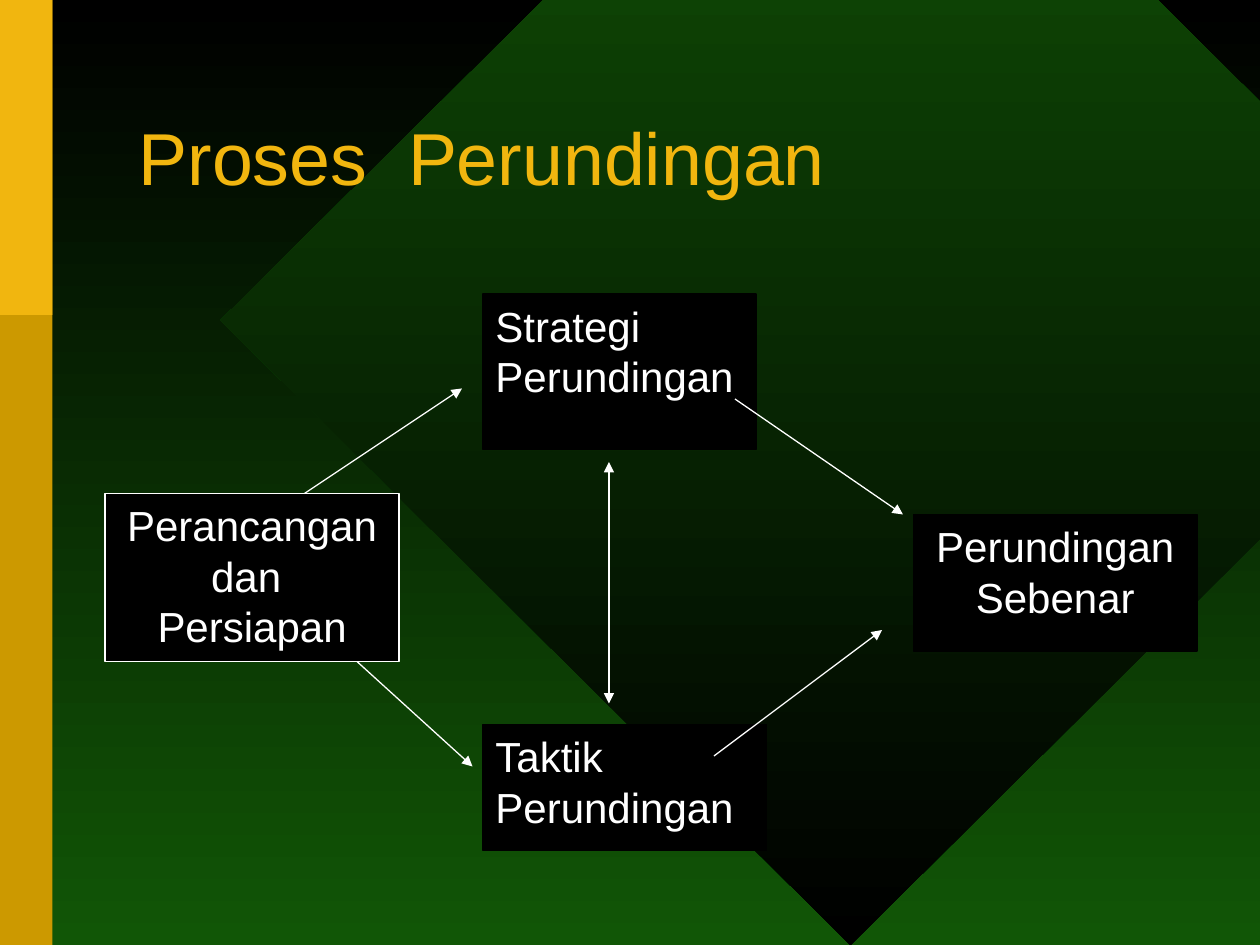
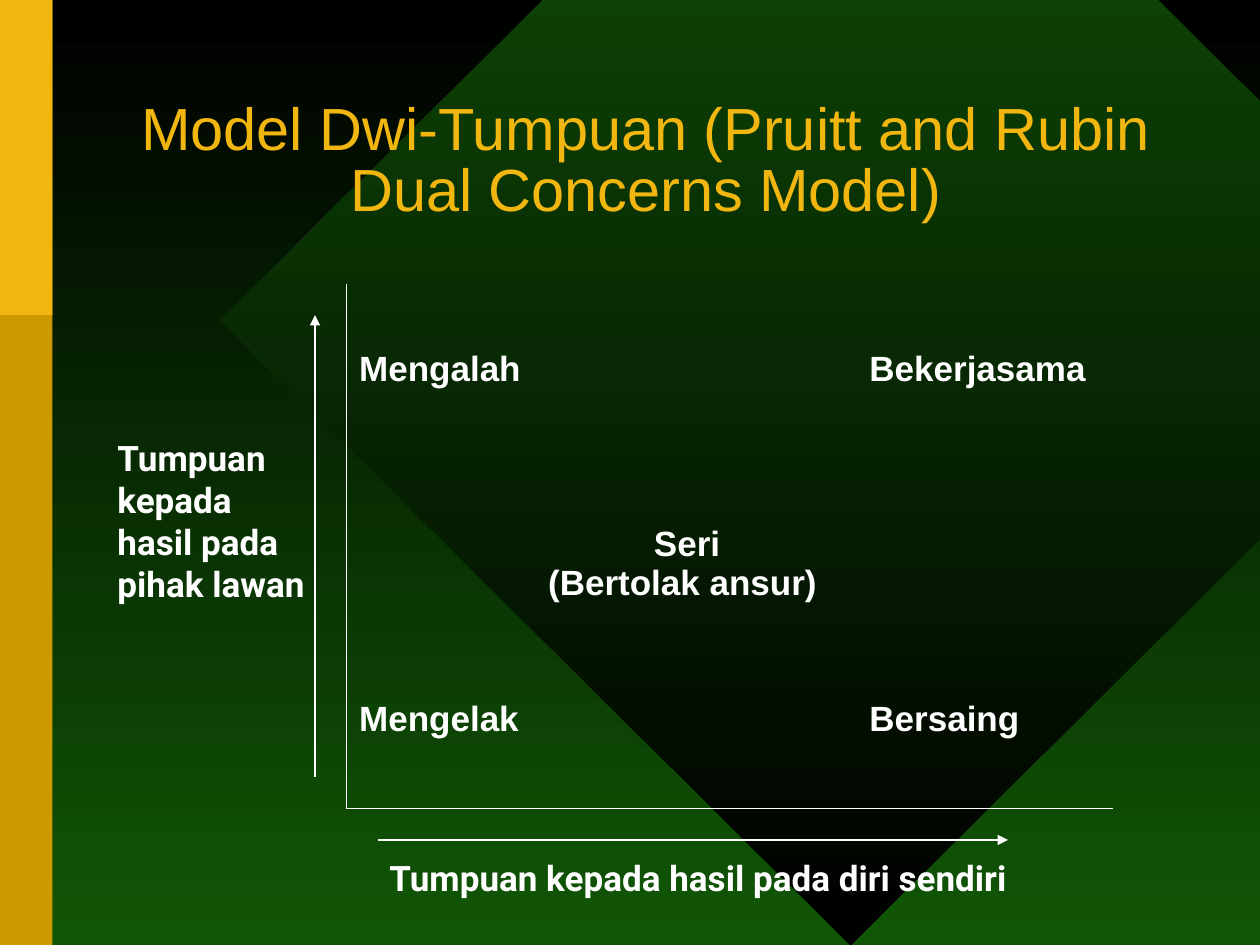
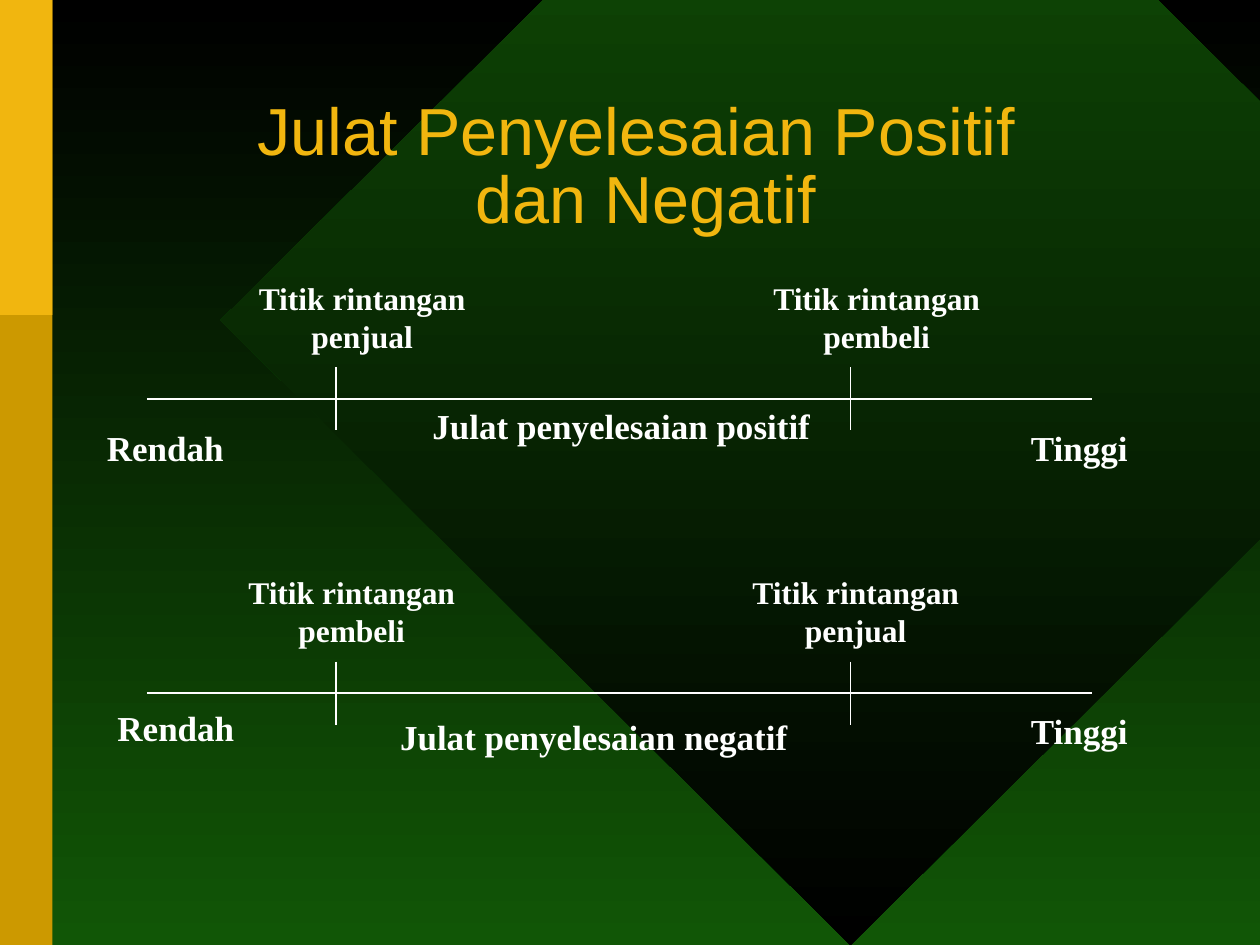
from lxml import etree
from pptx import Presentation
from pptx import util as u
from pptx.dml.color import RGBColor
from pptx.enum import shapes, text
from pptx.oxml.ns import qn

Pt = u.Pt
SHAPE = shapes.MSO_SHAPE
LEFT, CENTER = text.PP_ALIGN.LEFT, text.PP_ALIGN.CENTER
COLORS = {"black": "000000", "green": "115606", "gold": "F1B60F",
          "dark_gold": "CC9900", "white": "FFFFFF"}
NO_STYLE_NO_GRID = "{2D5ABB26-0587-4C30-8999-92F81FD0307C}"
TITLE_BOX = (72, 48, 594, 90)


def rgb(name):
    return RGBColor.from_string(COLORS[name])


def fill_down(fill, top, bottom):
    """Gradient that runs from top to bottom."""
    fill.gradient()
    fill.gradient_angle = 270
    for stop, name in zip(fill.gradient_stops, (top, bottom)):
        stop.color.rgb = rgb(name)


def format_text(tf, size, font="Arial", color="white", bold=False, align=LEFT):
    for p in tf.paragraphs:
        p.alignment = align
        for r in p.runs:
            r.font.size, r.font.name, r.font.bold = Pt(size), font, bold
            r.font.color.rgb = rgb(color)


def add_box(s, box, preset=SHAPE.RECTANGLE, fill=None, line=None):
    sp = s.shapes.add_shape(preset, *map(Pt, box))
    sp.shadow.inherit = False
    if fill:
        sp.fill.solid()
        sp.fill.fore_color.rgb = rgb(fill)
    if line:
        sp.line.color.rgb = rgb(line)
        sp.line.width = Pt(0.75)
    else:
        sp.line.fill.background()
    return sp


def add_label(s, box, words, size, font, align=LEFT):
    tf = s.shapes.add_textbox(*map(Pt, box)).text_frame
    tf.word_wrap = True
    tf.text = words
    format_text(tf, size, font, bold=True, align=align)


def add_line(s, start, end, *arrows):
    """Straight white line; arrows may name headEnd and tailEnd."""
    cx = s.shapes.add_connector(shapes.MSO_CONNECTOR.STRAIGHT,
                                *map(Pt, (*start, *end)))
    cx.line.color.rgb = rgb("white")
    cx.line.width = Pt(0.75)
    sp_pr = cx.element.spPr
    for arrow in arrows:
        etree.SubElement(sp_pr.find(qn("a:ln")), qn(f"a:{arrow}"), type="triangle")
    etree.SubElement(sp_pr, qn("a:effectLst"))


def add_slide(prs, title, size, align=CENTER, box=TITLE_BOX):
    s = prs.slides.add_slide(prs.slide_layouts[5])
    sp = s.shapes.title
    sp.left, sp.top, sp.width, sp.height = map(Pt, box)
    tf = sp.text_frame
    tf.text = title
    tf.word_wrap = True
    tf.auto_size = text.MSO_AUTO_SIZE.NONE
    tf.vertical_anchor = text.MSO_ANCHOR.MIDDLE
    tf.paragraphs[0].line_spacing = 0.85
    format_text(tf, size, color="gold", align=align)
    return s


def dress_master(prs, s):
    """Draw the shared backdrop on a slide, then move it to the master."""
    master = prs.slide_master
    fill_down(master.background.fill, "black", "green")
    diamond = add_box(s, (126, -174, 720, 714), SHAPE.DIAMOND)
    fill_down(diamond.fill, "green", "black")
    parts = [diamond,
             add_box(s, (0, 0, 30, 540), fill="dark_gold"),
             add_box(s, (0, 0, 30, 180), fill="gold")]
    tree = master.element.cSld.spTree
    for i, sp in enumerate(parts):
        sp.element.nvSpPr.cNvPr.id = 100 + i
        tree.insert(2 + i, sp.element)


def process_diagram(s, left, top):
    steps = [
        ((0, 114, 168, 96), "Perancangan dan \nPersiapan", CENTER, "white"),
        ((216, 0, 156, 89), "Strategi Perundingan", LEFT, "black"),
        ((462, 126, 162, 78), "Perundingan Sebenar", CENTER, "black"),
        ((216, 246, 162, 72), "Taktik Perundingan", LEFT, "black"),
    ]
    for (x, y, w, h), words, align, line in steps:
        sp = add_box(s, (left + x, top + y, w, h), fill="black", line=line)
        tf = sp.text_frame
        tf.text = words
        tf.vertical_anchor = text.MSO_ANCHOR.TOP
        format_text(tf, 24, align=align)
    arrows = [
        ((288, 96), (288, 234), "headEnd", "tailEnd"),
        ((114, 114), (204, 54), "tailEnd"),
        ((144, 210), (210, 270), "tailEnd"),
        ((360, 60), (456, 126), "tailEnd"),
        ((348, 264), (444, 192), "tailEnd"),
    ]
    for (x1, y1), (x2, y2), *ends in arrows:
        add_line(s, (left + x1, top + y1), (left + x2, top + y2), *ends)


def add_border(cell, side):
    ln = etree.SubElement(cell._tc.get_or_add_tcPr(), qn(f"a:{side}"), w=str(Pt(1)))
    solid = etree.SubElement(ln, qn("a:solidFill"))
    etree.SubElement(solid, qn("a:srgbClr"), val=COLORS["white"])


def concerns_grid(s, left, top):
    widths, row_height = (108, 183.6, 146.4), 100
    rows = [("Mengalah", "", "Bekerjasama"),
            ("", "Seri (Bertolak ansur)", ""),
            ("Mengelak", "", "Bersaing")]
    table = s.shapes.add_table(3, 3, Pt(left), Pt(top), Pt(sum(widths)),
                               Pt(3 * row_height)).table
    table.first_row = table.horz_banding = False
    table._tbl.tblPr.find(qn("a:tableStyleId")).text = NO_STYLE_NO_GRID
    for column, width in zip(table.columns, widths):
        column.width = Pt(width)
    for i, row in enumerate(rows):
        for j, words in enumerate(row):
            cell = table.cell(i, j)
            if j == 0:
                add_border(cell, "lnL")
            if i == 2:
                add_border(cell, "lnB")
            cell.fill.background()
            cell.margin_top = Pt(38)
            cell.text = words
            format_text(cell.text_frame, 20, bold=True)
    middle = table.cell(1, 1).text_frame.paragraphs[0]
    middle._p.get_or_add_pPr().set("indent", str(Pt(60.5)))


def concerns_axes(s, left, top):
    add_label(s, (left + 126, top + 240, 426, 31),
              "Tumpuan kepada hasil pada diri sendiri", 20, "Roboto", CENTER)
    add_label(s, (left, top, 126, 156),
              "Tumpuan kepada hasil pada pihak lawan", 20, "Roboto")
    add_line(s, (left + 120, top + 198), (left + 120, top - 66), "tailEnd")
    add_line(s, (left + 156, top + 234), (left + 516, top + 234), "tailEnd")


def settlement_range(s, left, top, points, ends, span):
    """Price line with two resistance points, its ends and the range between."""
    axis = top + 72
    add_line(s, (left + 30, axis), (left + 570, axis))
    for x in (138, 432):
        add_line(s, (left + x, axis - 18), (left + x, axis + 18))
    for x, party in points:
        add_label(s, (left + x, top, 138, 50), f"Titik rintangan {party}",
                  18, "Times New Roman", CENTER)
    for x, y, words, width in (*ends, span):
        add_label(s, (left + x, top + y, width, 31), words, 20, "Times New Roman")


def main():
    prs = Presentation()
    prs.slide_width, prs.slide_height = Pt(720), Pt(540)

    s = add_slide(prs, "Proses  Perundingan", 42, LEFT)
    dress_master(prs, s)
    process_diagram(s, 60, 168)

    s = add_slide(prs, "Model Dwi-Tumpuan (Pruitt and Rubin Dual Concerns Model)", 34)
    concerns_grid(s, 198, 162)
    concerns_axes(s, 60, 246)

    s = add_slide(prs, "Julat Penyelesaian Positif \vdan Negatif", 38,
                  box=(72, 55.5, 594, 82))
    settlement_range(s, 54, 156,
                     points=[(84, "penjual"), (378, "pembeli")],
                     ends=[(0, 84, "Rendah", 90), (528, 84, "Tinggi", 90)],
                     span=(186, 71.5, "Julat penyelesaian positif", 250))
    settlement_range(s, 54, 324,
                     points=[(78, "pembeli"), (366, "penjual")],
                     ends=[(6, 76, "Rendah", 90), (528, 78, "Tinggi", 90)],
                     span=(167.5, 81.5, "Julat penyelesaian negatif", 250))

    prs.save("out.pptx")


if __name__ == "__main__":
    main()
